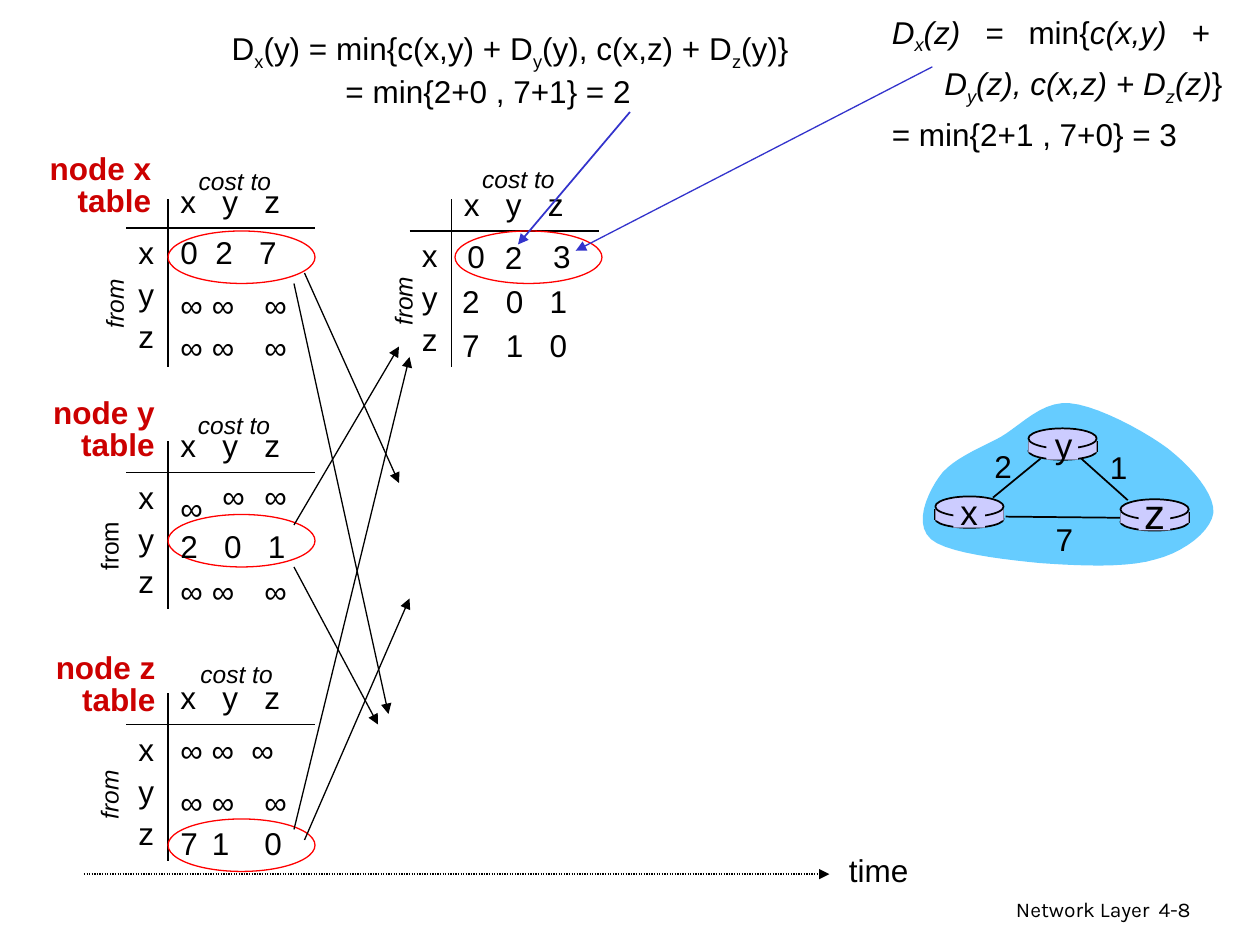
from lxml import etree
from pptx import Presentation
from pptx.dml.color import RGBColor
from pptx.enum import dml, shapes, text
from pptx.oxml.ns import qn
from pptx.util import Pt

BLACK = RGBColor(0, 0, 0)
RED = RGBColor(0xFF, 0, 0)
DARK_RED = RGBColor(0xCC, 0, 0)
BLUE = RGBColor(0x33, 0x33, 0xCC)
SKY = RGBColor(0x66, 0xCC, 0xFF)
LILAC = RGBColor(0xCC, 0xCC, 0xFF)
ALIGN = text.PP_ALIGN
OVAL, RECT = shapes.MSO_SHAPE.OVAL, shapes.MSO_SHAPE.RECTANGLE

deck = Presentation()
deck.slide_width, deck.slide_height = Pt(720), Pt(540)
slide = deck.slides.add_slide(deck.slide_layouts[6])
parts = slide.shapes


def put(x, y, w, h, paras, size=18, ink=BLACK, style="", align=ALIGN.LEFT,
        tabs=(), space=None, wrap=False, face="Arial"):
    """Add a text box; a paragraph is a string or a list of (text, style)
    runs, with styles b bold, i italic, s subscript."""
    box = parts.add_textbox(Pt(x), Pt(y), Pt(w), Pt(h))
    frame = box.text_frame
    frame.word_wrap = wrap or bool(tabs)
    frame.auto_size = text.MSO_AUTO_SIZE.SHAPE_TO_FIT_TEXT
    for n, runs in enumerate(paras):
        para = frame.paragraphs[0] if n == 0 else frame.add_paragraph()
        para.alignment = align
        if space:
            para.line_spacing = space
        if tabs:
            stops = etree.SubElement(para._p.get_or_add_pPr(), qn("a:tabLst"))
            for stop in tabs:
                etree.SubElement(stops, qn("a:tab"), pos=str(Pt(stop)), algn="l")
        for words, look in [(runs, style)] if isinstance(runs, str) else runs:
            if words == "\v":
                para.add_line_break()
                continue
            run = para.add_run()
            run.text = words
            font = run.font
            font.name, font.size, font.color.rgb = face, Pt(size), ink
            font.bold, font.italic = "b" in look, "i" in look
            if "s" in look:
                run._r.get_or_add_rPr().set("baseline", "-25000")
    return box


def link(x1, y1, x2, y2, ink=BLACK, width=0.75, arrow=False):
    """Add a straight line, with an arrowhead at its end if wanted."""
    wire = parts.add_connector(shapes.MSO_CONNECTOR.STRAIGHT,
                               Pt(x1), Pt(y1), Pt(x2), Pt(y2))
    wire.line.color.rgb, wire.line.width = ink, Pt(width)
    if arrow:
        etree.SubElement(wire.line._get_or_add_ln(), qn("a:tailEnd"), type="triangle")
    etree.SubElement(wire._element.spPr, qn("a:effectLst"))
    return wire


# Footer
put(435.5, 509, 228.5, 22, ["Network Layer"], 12, align=ALIGN.RIGHT,
    wrap=True, face="Karla")
put(655, 509, 53, 22, ["4-8"], 12, wrap=True, face="Karla")

# Table frames: axis x, axis top, rule y, "cost to", "from", its style, red ring
frames = [
    (96, 114, 130.3, (106.5, 91.5), (44, 161.5), "i", (96, 132)),
    (96, 252, 270, (106, 231), (41, 300), "", (96, 294)),
    (96, 396, 414, (107.5, 373), (41, 442), "i", (96, 468)),
    (258, 114, 132, (268.5, 90), (209, 160), "i", (260, 132)),
]
for x, top, rule, cost, origin, style, ring in frames:
    link(x, top, x, top + 96)
    link(x - 24, rule, x + 84, rule)
    put(*cost, 64, 24, ["cost to"], 14, style="i", wrap=True)
    put(*origin, 42.5, 24, ["from"], 14, style=style).rotation = 270
    put(x, rule - 30, 78, 29, ["x\ty\tz"], tabs=(24, 48))
    for n, name in enumerate("xyz"):
        put(x - 24, rule - 0.5 + 24 * n, 24, 29, [name])
    oval = parts.add_shape(OVAL, Pt(ring[0]), Pt(ring[1]), Pt(84), Pt(30))
    oval.shadow.inherit = False
    oval.fill.background()
    oval.line.color.rgb, oval.line.width = RED, Pt(0.75)

# Table names
for name, x, y in [("x", 21, 85), ("y", 23, 224.5), ("z", 23.5, 370)]:
    put(x, y, 72.5, 44, ["node " + name, "table"], ink=DARK_RED, style="b",
        align=ALIGN.RIGHT, space=0.85)

# Rows set with tab stops
for x, y, rows, tabs in [
    (96, 129.7, ["0\t2\t7"], (20, 45)),
    (96, 276, ["∞", "2\t0\t1"], (25, 50)),
    (96, 414, ["∞\t∞\t∞"], (17.8, 40.6)),
    (257, 157.7, ["2\t0\t1"], (25, 50)),
    (257, 183, ["7\t1\t0"], (25, 50)),
]:
    put(x, y, 80, 29 * len(rows), rows, tabs=tabs)

# Single cells
cols = (96, 114, 144)
cells = [(x, y, "∞") for y in (160, 183.7, 323.5, 444) for x in cols]
cells += [(x, 467.5, mark) for x, mark in zip(cols, "710")]
cells += [(120, 269.3, "∞"), (144, 269.3, "∞"),
          (260, 132, "0"), (281.5, 132.5, "2"), (309, 132, "3")]
for x, y, mark in cells:
    put(x, y, 27 if mark == "∞" else 24.5, 29, [mark])

# Messages between the nodes
for ends in [(174, 156, 228, 276), (168, 162, 222, 408), (168, 300, 228, 198),
             (168, 324, 216, 414), (168, 474, 234, 204), (174, 480, 234, 342)]:
    link(*ends, arrow=True)

# Time axis
link(48, 499.5, 474, 499.5, arrow=True).line.dash_style = dml.MSO_LINE.ROUND_DOT
put(478, 483, 48.5, 29, ["time"])

# Network cloud, from cubic curves
start = (536.4, 272.9)
curves = [
    ((542.9, 262.8), (559.4, 256.3), (571.7, 249.8)),
    ((583.9, 242.6), (595.4, 229), (611.3, 230.4)),
    ((627.1, 231.8), (653.8, 246.2), (667.4, 256.3)),
    ((681.1, 267.1), (694.1, 282.2), (693.4, 293)),
    ((691.9, 303.8), (676.8, 315.4), (660.2, 319.7)),
    ((643.7, 324.7), (615.6, 323.3), (594.7, 321.8)),
    ((573.1, 319.7), (541.4, 316.1), (532.1, 308.2)),
    ((522, 299.5), (529.9, 282.2), start),
]
dots, a = [], start
for b, c, d in curves:
    for t in (n / 10 for n in range(1, 11)):
        s = 1 - t
        dots.append([Pt(s**3 * a[k] + 3 * s * s * t * b[k]
                        + 3 * s * t * t * c[k] + t**3 * d[k]) for k in (0, 1)])
    a = d
edge = parts.build_freeform(Pt(start[0]), Pt(start[1]))
edge.add_line_segments(dots, close=True)
cloud = edge.convert_to_shape()
cloud.shadow.inherit = False
cloud.fill.solid()
cloud.fill.fore_color.rgb = SKY
cloud.line.fill.background()

# Links and costs
for ends in [(567.4, 284.4, 594.7, 262), (617.8, 262, 644.4, 285.8),
             (641.5, 295.9, 574.6, 295.2)]:
    link(*ends, width=1)
for cost, x, y in [("1", 627, 252.7), ("2", 561, 252), ("7", 596, 293.8)]:
    put(x, y, 24.5, 29, [cost], align=ALIGN.CENTER)

# Routers: name, place, label size, label box
for name, x, y, size, label in [
    ("x", 534.5, 283.7, 20, (541.5, 277, 24.5, 31)),
    ("z", 640.3, 285.3, 24, (646.5, 275, 26.5, 36)),
    ("y", 587.7, 244.8, 20, (595.5, 238.5, 24.5, 31)),
]:
    for side in (x, x + 39):
        link(side, y + 7.2, side, y + 13.7, width=1)
    for kind, dx, dy, w, h in [(OVAL, 0, 7.9, 39, 10), (RECT, 0, 7.2, 39, 6.5),
                               (OVAL, 0, 0, 39, 11.5), (RECT, 10.3, 1.4, 18, 16.5)]:
        part = parts.add_shape(kind, Pt(x + dx), Pt(y + dy), Pt(w), Pt(h))
        part.shadow.inherit = False
        part.fill.solid()
        part.fill.fore_color.rgb = LILAC
        if kind == OVAL:
            part.line.color.rgb, part.line.width = BLACK, Pt(1)
        else:
            part.line.fill.background()
    put(*label, [name], size, align=ALIGN.CENTER)

# Equations
left = put(125.3, 14.4, 339.8, 50.4, [
    [("D", ""), ("x", "s"), ("(y) = min{c(x,y) + D", ""), ("y", "s"),
     ("(y), c(x,z) + D", ""), ("z", "s"), ("(y)}", "")],
    "= min{2+0 , 7+1} = 2"])
left.text_frame.paragraphs[1]._p.get_or_add_pPr().set("marL", str(Pt(65)))
right = put(502.5, 2.2, 210.2, 85, [
    [("D", "i"), ("x", "is"), ("(z) = ", "i"), ("min{", ""), ("c(x,y) + ", "i"),
     ("\v", ""), ("D", "i"), ("y", "is"), ("(z), c(x,z) + D", "i"), ("z", "is"),
     ("(z)", "i"), ("}", "")],
    "= min{2+1 , 7+0} = 3"], align=ALIGN.JUSTIFY, space=1.2, wrap=True)
hang = right.text_frame.paragraphs[0]._p.get_or_add_pPr()
hang.set("marL", str(Pt(30)))
hang.set("indent", str(Pt(-30)))
for box in (left, right):
    box.text_frame.vertical_anchor = text.MSO_ANCHOR.MIDDLE
link(360, 64, 296, 139.7, BLUE, 1, arrow=True)
link(532.8, 38.2, 329, 143.3, BLUE, arrow=True)

deck.save("out.pptx")
